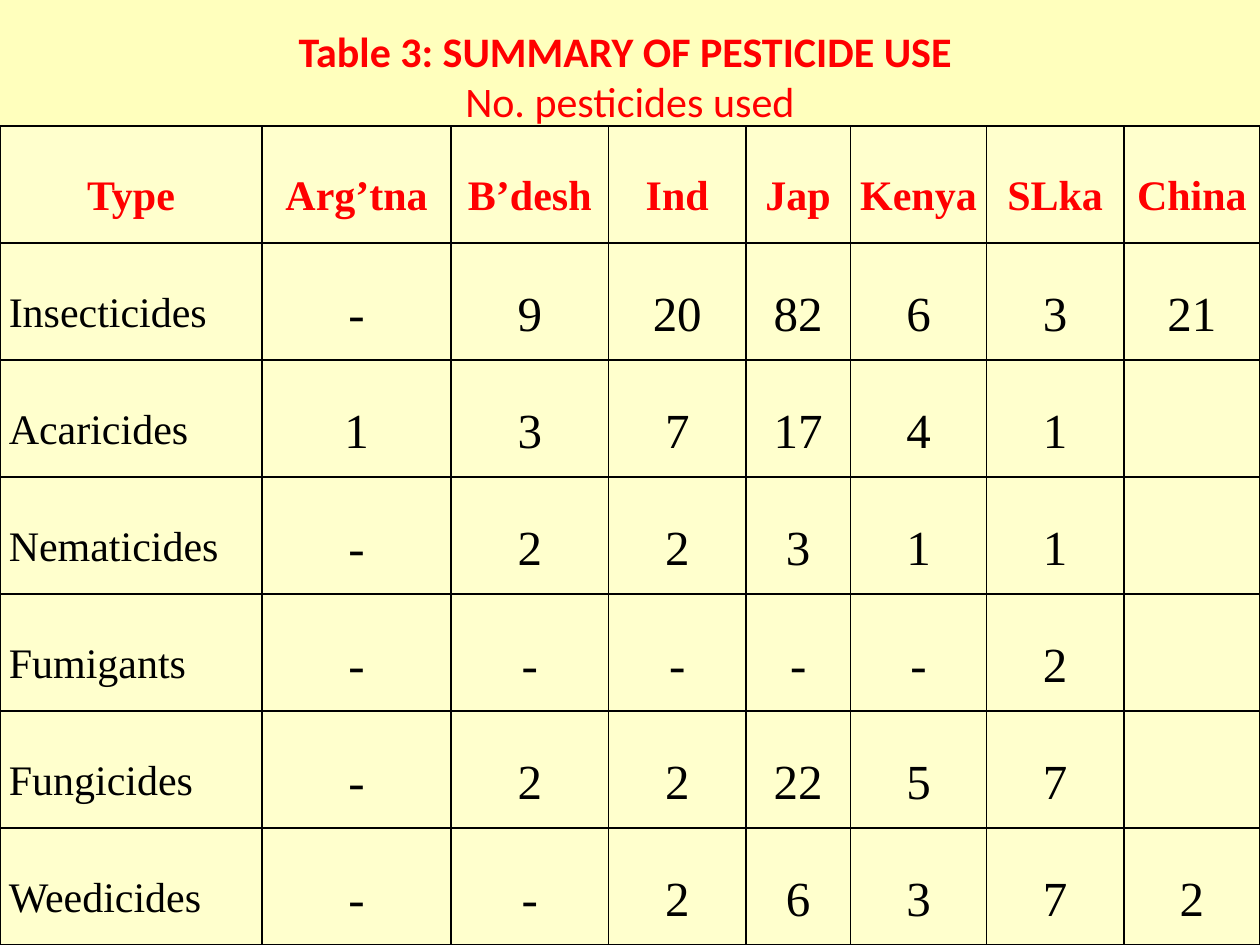
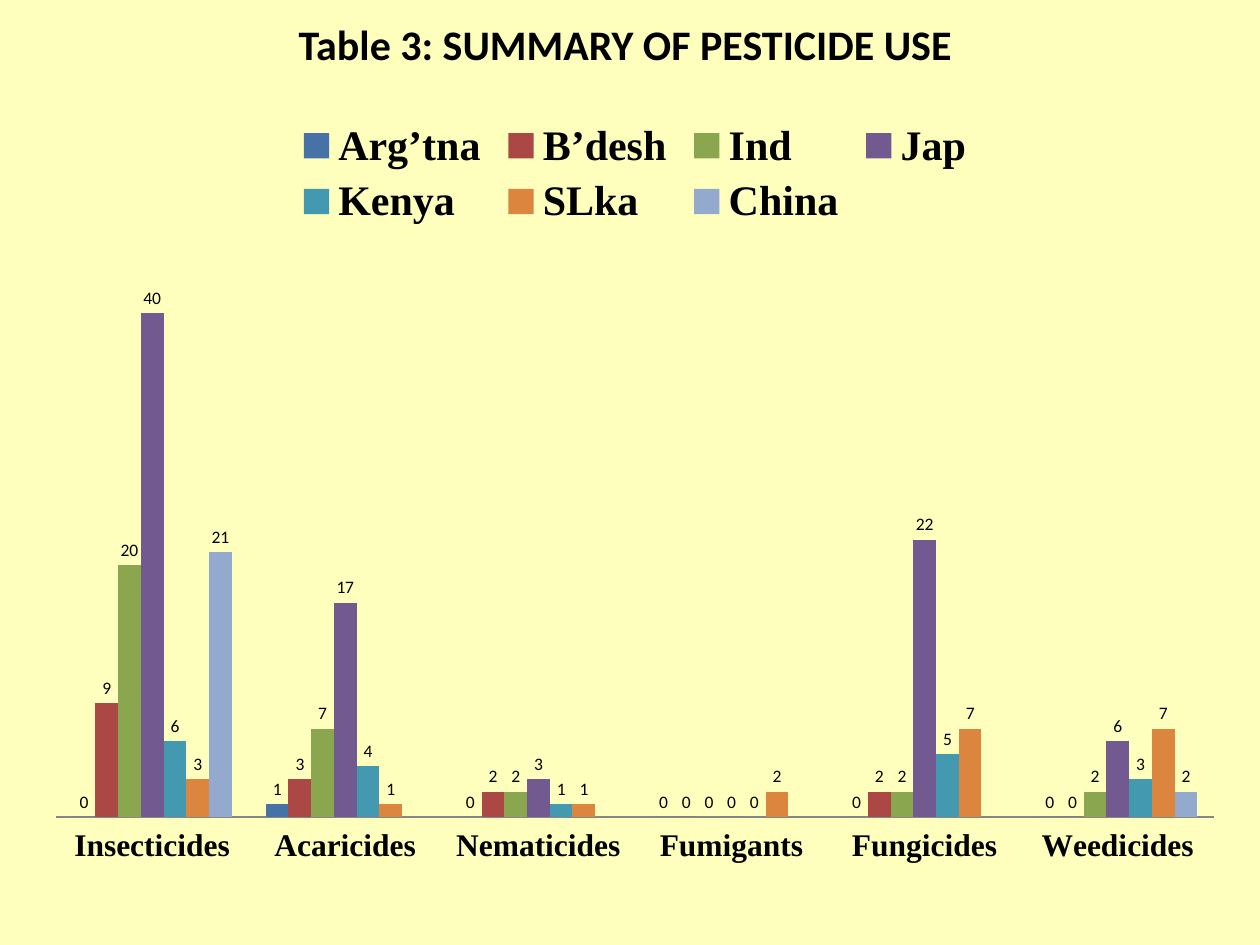
from lxml.etree import SubElement
from pptx import Presentation
from pptx.chart.data import CategoryChartData
from pptx.dml.color import RGBColor
from pptx.enum.chart import (XL_CHART_TYPE, XL_LABEL_POSITION, XL_LEGEND_POSITION,
                             XL_TICK_LABEL_POSITION, XL_TICK_MARK)
from pptx.enum.text import MSO_ANCHOR, PP_ALIGN
from pptx.oxml import parse_xml
from pptx.oxml.ns import nsdecls, qn
from pptx.util import Inches, Pt

# Content
TITLE = "Table 3: SUMMARY OF PESTICIDE USE "
SUBTITLE = "No. pesticides used"
COUNTRIES = ["Arg’tna", "B’desh", "Ind", "Jap", "Kenya", "SLka", "China"]
PESTICIDES = {
    "Insecticides": ["-", 9, 20, 82, 6, 3, 21],
    "Acaricides": [1, 3, 7, 17, 4, 1, ""],
    "Nematicides": ["-", 2, 2, 3, 1, 1, ""],
    "Fumigants": ["-", "-", "-", "-", "-", 2, ""],
    "Fungicides": ["-", 2, 2, 22, 5, 7, ""],
    "Weedicides": ["-", "-", 2, 6, 3, 7, 2],
}
CHART_LIMIT = 40  # the tallest column is cut here
COUNTRY_COLORS = ["4672A8", "AB4744", "8AA64F", "725990", "4299B0", "DC853E", "93A9CE"]

# Shared style and geometry
WIDTH, HEIGHT = 10, 7.5
PAPER, CELL, RED, BLACK, GRAY = "FFFFBD", "FFFFCD", "FF0000", "000000", "878787"
SANS, SERIF = "Calibri", "Times New Roman"
COLUMN_WIDTHS = [2.08, 1.5, 1.25, 1.09, 0.83, 1.08, 1.09, 1.08]
TABLE_TOP = 1


def rgb(color):
    return RGBColor.from_string(color)


def style_font(font, size, color=BLACK, bold=False, face=SANS):
    font.size, font.bold, font.name = Pt(size), bold, face
    font.color.rgb = rgb(color)


def write(paragraph, text, align=PP_ALIGN.CENTER, **style):
    paragraph.alignment = align
    run = paragraph.add_run()
    run.text = str(text)
    style_font(run.font, **style)


def add_slide(deck):
    slide = deck.slides.add_slide(deck.slide_layouts[6])
    slide.background.fill.solid()
    slide.background.fill.fore_color.rgb = rgb(PAPER)
    return slide


def add_title(slide, lines, height, inset, color):
    box = slide.shapes.add_textbox(0, 0, Inches(WIDTH), Inches(height))
    frame = box.text_frame
    frame.word_wrap = True
    frame.vertical_anchor = MSO_ANCHOR.TOP
    frame.margin_top, frame.margin_bottom = Inches(inset), 0
    for index, line in enumerate(lines):
        paragraph = frame.add_paragraph() if index else frame.paragraphs[0]
        write(paragraph, line, size=24, color=color, bold=index == 0)


def style_cell(cell):
    cell.margin_left = cell.margin_right = Inches(0.07)
    cell.margin_top = cell.margin_bottom = 0
    cell.vertical_anchor = MSO_ANCHOR.MIDDLE
    properties = cell._tc.get_or_add_tcPr()
    for side in ("lnL", "lnR", "lnT", "lnB"):
        border = SubElement(properties, qn(f"a:{side}"), w=str(Pt(1)))
        fill = SubElement(border, qn("a:solidFill"))
        SubElement(fill, qn("a:srgbClr"), val=BLACK)
    cell.fill.solid()
    cell.fill.fore_color.rgb = rgb(CELL)


def add_use_table(slide):
    rows = [["Type", *COUNTRIES]] + [[kind, *uses] for kind, uses in PESTICIDES.items()]
    table = slide.shapes.add_table(len(rows), len(rows[0]), 0, Inches(TABLE_TOP),
                                   Inches(WIDTH), Inches(HEIGHT - TABLE_TOP)).table
    for column, width in zip(table.columns, COLUMN_WIDTHS):
        column.width = Inches(width)
    for r, row in enumerate(rows):
        for c, entry in enumerate(row):
            cell = table.cell(r, c)
            style_cell(cell)
            if entry == "":
                continue
            paragraph = cell.text_frame.paragraphs[0]
            paragraph.line_spacing = 1.5
            paragraph.space_before = paragraph.space_after = Pt(6)
            header, label = r == 0, c == 0
            write(paragraph, entry, face=SERIF, bold=header,
                  align=PP_ALIGN.LEFT if label and not header else PP_ALIGN.CENTER,
                  size=24 if header or label else 28, color=RED if header else BLACK)


def charted(use):
    if use == "":
        return None
    return 0 if use == "-" else min(use, CHART_LIMIT)


def place_plot(chart, **shares):
    entries = "".join(f'<c:{key} val="{share}"/>' for key, share in shares.items())
    layout = parse_xml(
        f'<c:layout {nsdecls("c")}><c:manualLayout><c:layoutTarget val="inner"/>'
        f'<c:xMode val="edge"/><c:yMode val="edge"/>{entries}</c:manualLayout></c:layout>')
    plot_area = chart._chartSpace.chart.plotArea
    for old in plot_area.findall(qn("c:layout")):
        plot_area.remove(old)
    plot_area.insert(0, layout)


def add_use_chart(slide):
    uses = CategoryChartData()
    uses.categories = list(PESTICIDES)
    for country, column in zip(COUNTRIES, zip(*PESTICIDES.values())):
        uses.add_series(country, [charted(use) for use in column])
    chart = slide.shapes.add_chart(XL_CHART_TYPE.COLUMN_CLUSTERED, Inches(0.25), Inches(0.83),
                                   Inches(9.58), Inches(6.08), uses).chart
    style_font(chart.font, 10)
    chart.has_title = False
    place_plot(chart, x=0.02, y=0.19, w=0.96, h=0.74)

    # Legend and axes
    chart.has_legend = True
    chart.legend.position = XL_LEGEND_POSITION.TOP
    chart.legend.include_in_layout = False
    style_font(chart.legend.font, 24, bold=True, face=SERIF)
    kinds, amounts = chart.category_axis, chart.value_axis
    kinds.major_tick_mark = XL_TICK_MARK.NONE
    kinds.tick_label_position = XL_TICK_LABEL_POSITION.LOW
    kinds.format.line.color.rgb = rgb(GRAY)
    style_font(kinds.tick_labels.font, 18, bold=True, face=SERIF)
    amounts.visible = amounts.has_major_gridlines = False
    amounts.minimum_scale, amounts.maximum_scale = 0, 45

    # Columns and their values
    plot = chart.plots[0]
    plot.gap_width, plot.overlap, plot.vary_by_categories = 150, 0, False
    plot.has_data_labels = True
    plot.data_labels.show_value = True
    plot.data_labels.position = XL_LABEL_POSITION.OUTSIDE_END
    style_font(plot.data_labels.font, 10)
    for series, color in zip(plot.series, COUNTRY_COLORS):
        series.format.fill.solid()
        series.format.fill.fore_color.rgb = rgb(color)


def main():
    deck = Presentation()
    deck.slide_width, deck.slide_height = Inches(WIDTH), Inches(HEIGHT)

    table_slide = add_slide(deck)
    add_title(table_slide, [TITLE, SUBTITLE], height=0.75, inset=0.2, color=RED)
    add_use_table(table_slide)

    chart_slide = add_slide(deck)
    add_title(chart_slide, [TITLE], height=0.67, inset=0.15, color=BLACK)
    add_use_chart(chart_slide)

    deck.save("out.pptx")


if __name__ == "__main__":
    main()
